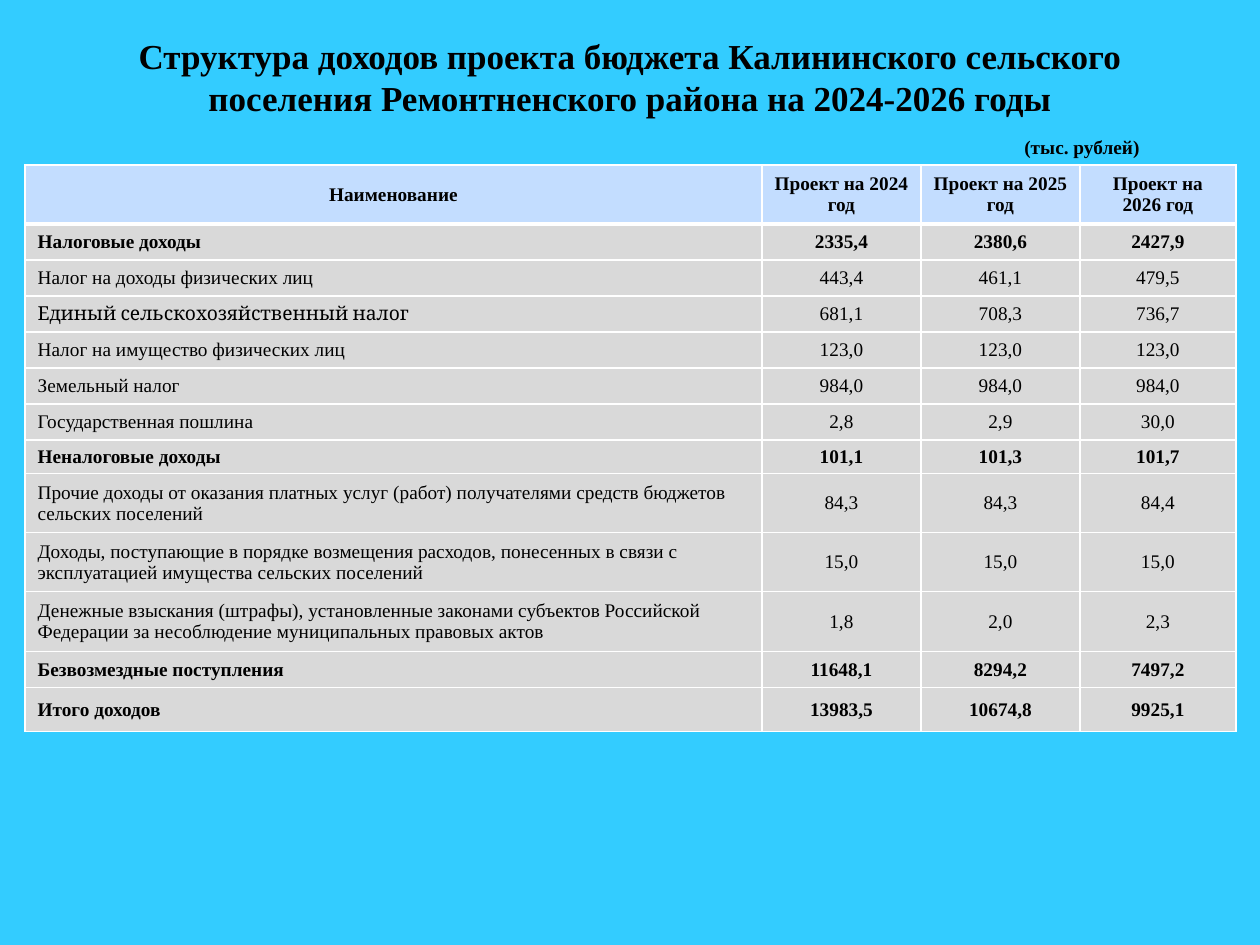
import pptx
import pptx.util
import pptx.dml.color
import pptx.enum.text
import pptx.oxml
import pptx.oxml.ns

FONT = "Times New Roman"
TITLE = ("Структура доходов проекта бюджета Калининского сельского "
         "поселения Ремонтненского района на 2024-2026 годы")
UNITS = "(тыс. рублей)"
HEADER = ("Наименование", "Проект на 2024 год", "Проект на 2025 год", "Проект на 2026 год")
# (row height in px, bold, name, values by year)
INCOME = [
    (36, True, "Налоговые доходы", "2335,4", "2380,6", "2427,9"),
    (36, False, "Налог на доходы физических лиц", "443,4", "461,1", "479,5"),
    (36, False, "Единый сельскохозяйственный налог", "681,1", "708,3", "736,7"),
    (36, False, "Налог на имущество физических лиц", "123,0", "123,0", "123,0"),
    (36, False, "Земельный налог", "984,0", "984,0", "984,0"),
    (36, False, "Государственная пошлина", "2,8", "2,9", "30,0"),
    (34, True, "Неналоговые доходы", "101,1", "101,3", "101,7"),
    (59, False, "Прочие доходы от оказания платных услуг (работ) получателями "
     "средств бюджетов сельских поселений", "84,3", "84,3", "84,4"),
    (59, False, "Доходы, поступающие в порядке возмещения расходов, понесенных в связи с "
     "эксплуатацией имущества сельских поселений", "15,0", "15,0", "15,0"),
    (60, False, "Денежные взыскания (штрафы), установленные законами субъектов Российской "
     "Федерации за несоблюдение муниципальных правовых актов", "1,8", "2,0", "2,3"),
    (36, True, "Безвозмездные поступления", "11648,1", "8294,2", "7497,2"),
    (44, True, "Итого доходов", "13983,5", "10674,8", "9925,1"),
]
ROWS = [(59, True) + HEADER] + INCOME
CAMBRIA_NAME = "Единый сельскохозяйственный налог"
COLUMNS = (737, 159, 159, 156)
ALIGN = pptx.enum.text.PP_ALIGN
MIDDLE = pptx.enum.text.MSO_ANCHOR.MIDDLE


def px(n):
    return pptx.util.Emu(round(n * 914400 / 126))


def color(value):
    return pptx.dml.color.RGBColor.from_string(value)


def write(tf, text, size, bold, align, font=FONT):
    tf.word_wrap = True
    p = tf.paragraphs[0]
    p.alignment = align
    r = p.add_run()
    r.text = text
    r.font.name = font
    r.font.size = pptx.util.Pt(size)
    r.font.bold = bold
    r.font.color.rgb = color("000000")


def border(cell, widths):
    """Draw white borders; widths are points for left, right, top, bottom."""
    tcPr = cell._tc.get_or_add_tcPr()
    for i, (side, width) in enumerate(zip("LRTB", widths)):
        ln = pptx.oxml.parse_xml(
            f'<a:ln{side} {pptx.oxml.ns.nsdecls("a")} w="{pptx.util.Pt(width)}">'
            f'<a:solidFill><a:srgbClr val="FFFFFF"/></a:solidFill></a:ln{side}>')
        tcPr.insert(i, ln)


prs = pptx.Presentation()
prs.slide_width, prs.slide_height = px(1260), px(945)
s = prs.slides.add_slide(prs.slide_layouts[5])
s.background.fill.solid()
s.background.fill.fore_color.rgb = color("33CCFF")

# Title and units
title = s.shapes.title
title.left, title.top, title.width, title.height = map(px, (63, 30, 1134, 92))
title.text_frame.vertical_anchor = MIDDLE
write(title.text_frame, TITLE, 20, True, ALIGN.CENTER)

units = s.shapes.add_textbox(px(900), px(130), px(252), px(34))
units.text_frame.vertical_anchor = MIDDLE
write(units.text_frame, UNITS, 11, True, ALIGN.RIGHT)

# Income table
frame = s.shapes.add_table(len(ROWS), len(COLUMNS), px(25), px(165),
                           px(sum(COLUMNS)), px(sum(row[0] for row in ROWS)))
table = frame.table
for column, width in zip(table.columns, COLUMNS):
    column.width = px(width)

for i, (height, bold, *texts) in enumerate(ROWS):
    table.rows[i].height = px(height)
    for j, text in enumerate(texts):
        cell = table.cell(i, j)
        cell.vertical_anchor = MIDDLE
        cell.margin_top = cell.margin_bottom = px(5)
        cell.fill.solid()
        cell.fill.fore_color.rgb = color("D9D9D9" if i else "C3DDFF")
        border(cell, (1, 1, 3 if i == 1 else 1, 1 if i else 3))
        write(cell.text_frame, text, 11, bold,
              ALIGN.LEFT if i and j == 0 else ALIGN.CENTER,
              "Cambria" if text == CAMBRIA_NAME else FONT)

prs.save("out.pptx")
